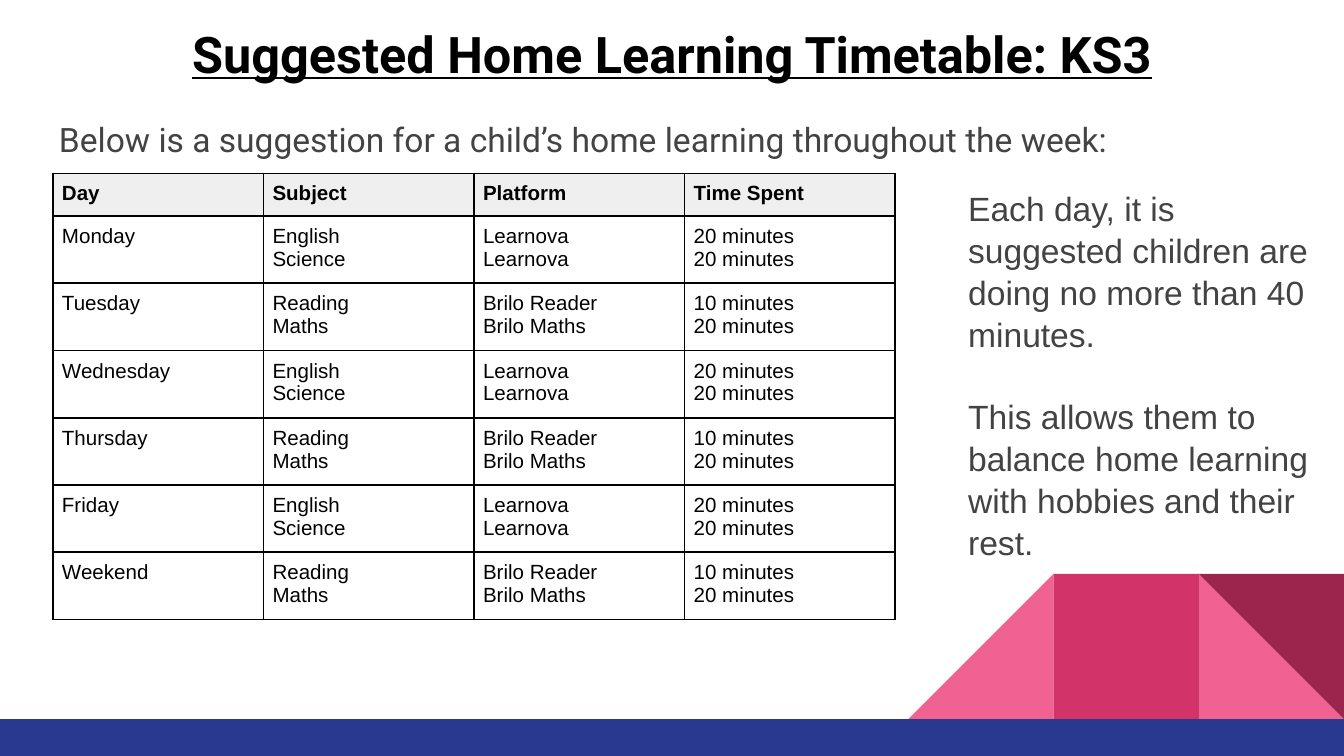
import pptx
import pptx.dml.color
import pptx.enum.shapes
import pptx.enum.text
import pptx.oxml
import pptx.oxml.ns
import pptx.util

Pt = pptx.util.Pt
Shape = pptx.enum.shapes.MSO_SHAPE


def paint(target, color):
    if hasattr(target, "solid"):
        target.solid()
        target.fore_color.rgb = pptx.dml.color.RGBColor.from_string(color)
    else:
        target.color.rgb = pptx.dml.color.RGBColor.from_string(color)


def write(frame, text, font, size, color, bold=False):
    frame.word_wrap = True
    frame.text = text
    for para in frame.paragraphs:
        for span in para.runs:
            span.font.name = font
            span.font.size = Pt(size)
            span.font.bold = bold
            paint(span.font, color)


deck = pptx.Presentation()
deck.slide_width = Pt(720)
deck.slide_height = Pt(405)
page = deck.slides.add_slide(deck.slide_layouts[6])

side = 77.8
floor = 385.2
blocks = [
    (Shape.RIGHT_TRIANGLE, 1, 0, "F06292"),
    (Shape.RIGHT_TRIANGLE, 3, 270, "F06292"),
    (Shape.RECTANGLE, 2, 0, "D23369"),
    (Shape.RIGHT_TRIANGLE, 1, 180, "9C254D"),
]
for kind, steps, turn, color in blocks:
    block = page.shapes.add_shape(kind, Pt(720 - steps * side), Pt(floor - side), Pt(side), Pt(side))
    block.rotation = turn
    block.shadow.inherit = False
    paint(block.fill, color)
    block.line.fill.background()

bar = page.shapes.add_shape(Shape.RECTANGLE, 0, Pt(floor), Pt(720), Pt(405 - floor))
bar.shadow.inherit = False
paint(bar.fill, "2A3990")
bar.line.fill.background()

boxes = []
for left, top, width, height in [(24.5, 5, 671, 47.5), (24.5, 53.3, 671, 263), (511.6, 92.9, 199.4, 219)]:
    box = page.shapes.add_textbox(Pt(left), Pt(top), Pt(width), Pt(height))
    frame = box.text_frame
    frame.margin_left = frame.margin_right = frame.margin_top = frame.margin_bottom = Pt(7.2)
    boxes.append(frame)
title, intro, advice = boxes

write(title, "Suggested Home Learning Timetable: KS3", "Roboto", 27, "000000", True)
title.paragraphs[0].alignment = pptx.enum.text.PP_ALIGN.CENTER
title.paragraphs[0].runs[0].font.underline = True

write(intro, "Below is a suggestion for a child’s home learning throughout the week:", "Roboto", 18, "434343")
intro.paragraphs[0].line_spacing = 1.15
intro.paragraphs[0].space_after = Pt(12)

write(
    advice,
    "Each day, it is suggested children are doing no more than 40 minutes.\n"
    "This allows them to balance home learning with hobbies and their rest.",
    "Arial", 18, "434343",
)
for para in advice.paragraphs:
    para.line_spacing = 1.04
advice.paragraphs[0].space_after = Pt(21.5)

plans = [
    ("English\nScience", "Learnova\nLearnova", "20 minutes\n20 minutes"),
    ("Reading\nMaths", "Brilo Reader\nBrilo Maths", "10 minutes\n20 minutes"),
]
days = ["Monday", "Tuesday", "Wednesday", "Thursday", "Friday", "Weekend"]
rows = [("Day", "Subject", "Platform", "Time Spent")]
rows += [(day, *plans[index % 2]) for index, day in enumerate(days)]

header_height, row_height, column_width = 22.2, 34.5, 112.8
table = page.shapes.add_table(
    len(rows), 4, Pt(28.4), Pt(92.9), Pt(4 * column_width), Pt(header_height + len(days) * row_height)
).table
for column in table.columns:
    column.width = Pt(column_width)

for row_index, row in enumerate(rows):
    is_header = row_index == 0
    table.rows[row_index].height = Pt(header_height if is_header else row_height)
    for column_index, text in enumerate(row):
        cell = table.cell(row_index, column_index)
        cell.margin_left = cell.margin_right = cell.margin_top = cell.margin_bottom = Pt(4.8)
        write(cell.text_frame, text, "Arial", 11, "000000", is_header)
        properties = cell._tc.get_or_add_tcPr()
        for edge in ("lnL", "lnR", "lnT", "lnB"):
            properties.append(pptx.oxml.parse_xml(
                f'<a:{edge} {pptx.oxml.ns.nsdecls("a")} w="12700">'
                f'<a:solidFill><a:srgbClr val="000000"/></a:solidFill></a:{edge}>'
            ))
        if is_header:
            paint(cell.fill, "EFEFEF")
        else:
            cell.fill.background()

deck.save("out.pptx")
